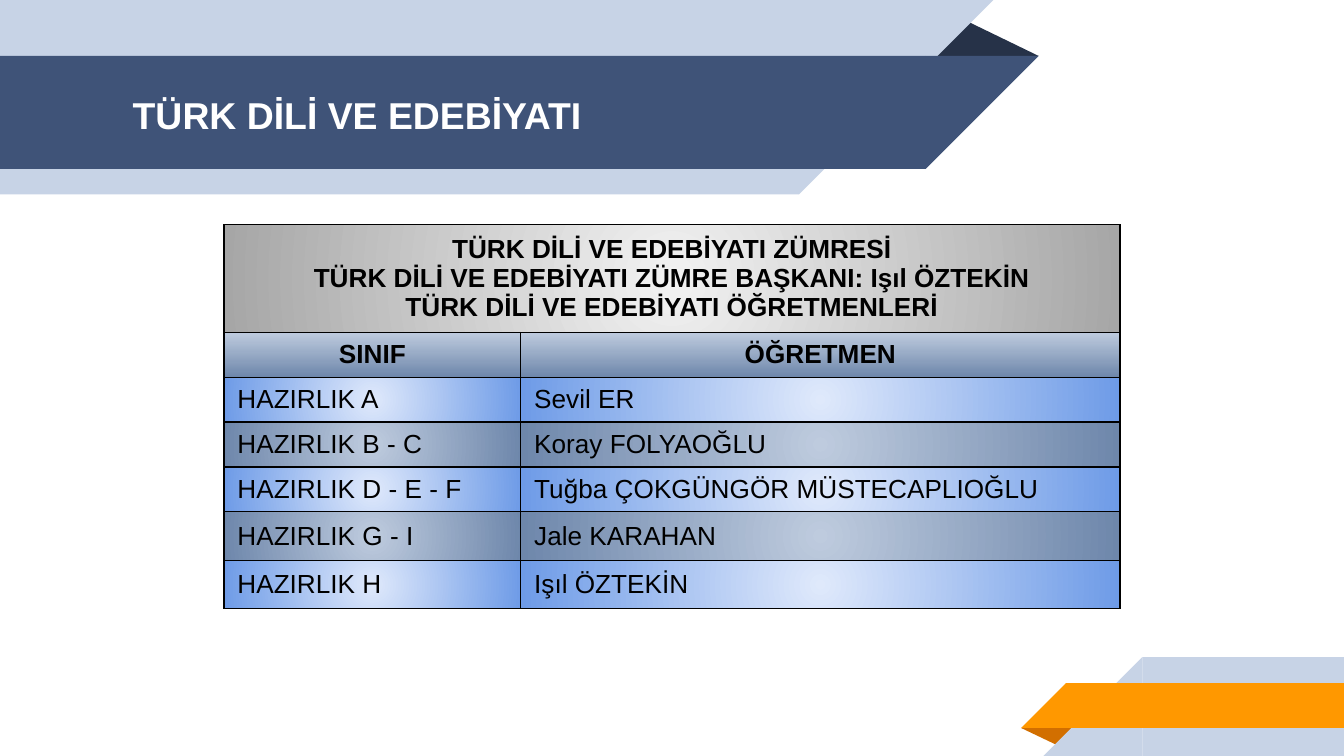
from lxml import etree
from pptx import Presentation
from pptx import util as u
from pptx.dml import color
from pptx.enum import shapes, text
from pptx.oxml import ns

FONT = "Arial"
PALE, NAVY, DARK_NAVY = "C7D3E6", "3F5378", "263248"
ORANGE, DARK_ORANGE = "FF9800", "D26F00"
GREY_GRADIENT = ("F2F2F2", "A6A6A6")
SLATE_GRADIENT = ("BECBDE", "6E87AB")
BLUE_GRADIENT = ("DFE9FB", "6E9BE7")
COLUMN_WIDTHS = (159, 89, 112, 120)
ROW_HEIGHTS = (54.4, 23, 23, 23, 23, 26, 26)
HEADING = (
    "TÜRK DİLİ VE EDEBİYATI ZÜMRESİ\n"
    "TÜRK DİLİ VE EDEBİYATI ZÜMRE BAŞKANI: Işıl ÖZTEKİN\n"
    "TÜRK DİLİ VE EDEBİYATI ÖĞRETMENLERİ"
)
TEACHERS = (
    ("HAZIRLIK A", "Sevil ER"),
    ("HAZIRLIK B - C", "Koray FOLYAOĞLU"),
    ("HAZIRLIK D - E - F", "Tuğba ÇOKGÜNGÖR MÜSTECAPLIOĞLU"),
    ("HAZIRLIK G - I", "Jale KARAHAN"),
    ("HAZIRLIK H", "Işıl ÖZTEKİN"),
)


def rgb(value):
    """Turn a hex string into a colour."""
    return color.RGBColor.from_string(value)


def add_box(slide, kind, left, top, width, height, fill, rotation=0):
    """Add a plain filled preset shape."""
    shape = slide.shapes.add_shape(
        kind, u.Pt(left), u.Pt(top), u.Pt(width), u.Pt(height))
    shape.shadow.inherit = False
    shape.fill.solid()
    shape.fill.fore_color.rgb = rgb(fill)
    shape.line.fill.background()
    shape.rotation = rotation
    return shape


def add_fold(slide, left, top, width, height, fill, rotation=0):
    """Add the dark triangle that shows behind a ribbon."""
    triangle = shapes.MSO_SHAPE.ISOSCELES_TRIANGLE
    shape = add_box(slide, triangle, left, top, width, height, fill, rotation)
    shape.adjustments[0] = 0.324


def add_ribbon(slide, left, top, width, height, fill, slant_right):
    """Add a band with a 45 degree slant beyond its right or left end."""
    add_box(slide, shapes.MSO_SHAPE.RECTANGLE, left, top, width, height, fill)
    slant_left = left + width if slant_right else left - height
    add_box(slide, shapes.MSO_SHAPE.RIGHT_TRIANGLE, slant_left, top,
            height, height, fill, 90 if slant_right else 270)


def format_text(text_frame, size, colour, bold, alignment):
    """Format every paragraph of a text frame alike."""
    for paragraph in text_frame.paragraphs:
        paragraph.alignment = alignment
        for run in paragraph.runs:
            run.font.name = FONT
            run.font.size = u.Pt(size)
            run.font.bold = bold
            run.font.color.rgb = rgb(colour)


def add_title(slide, title):
    """Add the title on the navy ribbon."""
    box = slide.shapes.add_textbox(u.Pt(64), u.Pt(31), u.Pt(414), u.Pt(60.5))
    frame = box.text_frame
    frame.word_wrap = True
    frame.vertical_anchor = text.MSO_ANCHOR.MIDDLE
    frame.margin_top = frame.margin_bottom = u.Pt(7.2)
    frame.text = title
    format_text(frame, 20, "FFFFFF", True, text.PP_ALIGN.LEFT)


def add_element(parent, tag, **attributes):
    """Append an XML element in the drawing namespace."""
    return etree.SubElement(parent, ns.qn(tag), **attributes)


def style_cell(cell, gradient, radial):
    """Give a cell thin black borders and a two-colour gradient."""
    properties = cell._tc.get_or_add_tcPr()
    for side in ("a:lnL", "a:lnR", "a:lnT", "a:lnB"):
        line = add_element(properties, side, w=str(u.Pt(0.75)))
        add_element(add_element(line, "a:solidFill"), "a:srgbClr", val="000000")
    fill = add_element(properties, "a:gradFill", rotWithShape="1")
    stops = add_element(fill, "a:gsLst")
    for position, colour in zip(("0", "100000"), gradient):
        stop = add_element(stops, "a:gs", pos=position)
        add_element(stop, "a:srgbClr", val=colour)
    if radial:
        centre = add_element(fill, "a:path", path="circle")
        add_element(centre, "a:fillToRect", l="50000", t="50000",
                    r="50000", b="50000")
    else:
        add_element(fill, "a:lin", ang="5400000", scaled="0")


def fill_row(table, row, texts, gradient, bold=False, radial=True):
    """Write one table row, the last text spanning the remaining columns."""
    last = len(COLUMN_WIDTHS) - 1
    table.cell(row, len(texts) - 1).merge(table.cell(row, last))
    for column in range(last + 1):
        style_cell(table.cell(row, column), gradient, radial)
    alignment = text.PP_ALIGN.CENTER if bold else text.PP_ALIGN.LEFT
    for column, content in enumerate(texts):
        cell = table.cell(row, column)
        cell.vertical_anchor = text.MSO_ANCHOR.MIDDLE
        cell.text_frame.text = content
        format_text(cell.text_frame, 14, "000000", bold, alignment)


def add_teacher_table(slide):
    """Add the table of classes and their teachers."""
    frame = slide.shapes.add_table(
        len(ROW_HEIGHTS), len(COLUMN_WIDTHS), u.Pt(120), u.Pt(120.4),
        u.Pt(sum(COLUMN_WIDTHS)), u.Pt(sum(ROW_HEIGHTS)))
    table = frame.table
    table.first_row = table.horz_banding = False
    for column, width in zip(table.columns, COLUMN_WIDTHS):
        column.width = u.Pt(width)
    for row, height in zip(table.rows, ROW_HEIGHTS):
        row.height = u.Pt(height)
    fill_row(table, 0, (HEADING,), GREY_GRADIENT, bold=True)
    fill_row(table, 1, ("SINIF", "ÖĞRETMEN"), SLATE_GRADIENT, True, False)
    for row, texts in enumerate(TEACHERS, start=2):
        fill_row(table, row, texts, SLATE_GRADIENT if row % 2 else BLUE_GRADIENT)


def main():
    """Build and save the slide."""
    presentation = Presentation()
    presentation.slide_width = u.Pt(720)
    presentation.slide_height = u.Pt(405)
    slide = presentation.slides.add_slide(presentation.slide_layouts[6])
    add_fold(slide, 495.5, 10, 61, 20, DARK_NAVY)
    add_ribbon(slide, 0, 0, 428, 104.2, PALE, slant_right=True)
    add_ribbon(slide, 0, 30, 496, 60.5, NAVY, slant_right=True)
    add_fold(slide, 547, 390, 31, 10, DARK_ORANGE, rotation=180)
    add_ribbon(slide, 612, 352, 108, 53, PALE, slant_right=False)
    add_ribbon(slide, 571, 366, 149, 24, ORANGE, slant_right=False)
    add_title(slide, "TÜRK DİLİ VE EDEBİYATI")
    add_teacher_table(slide)
    presentation.save("out.pptx")


if __name__ == "__main__":
    main()
